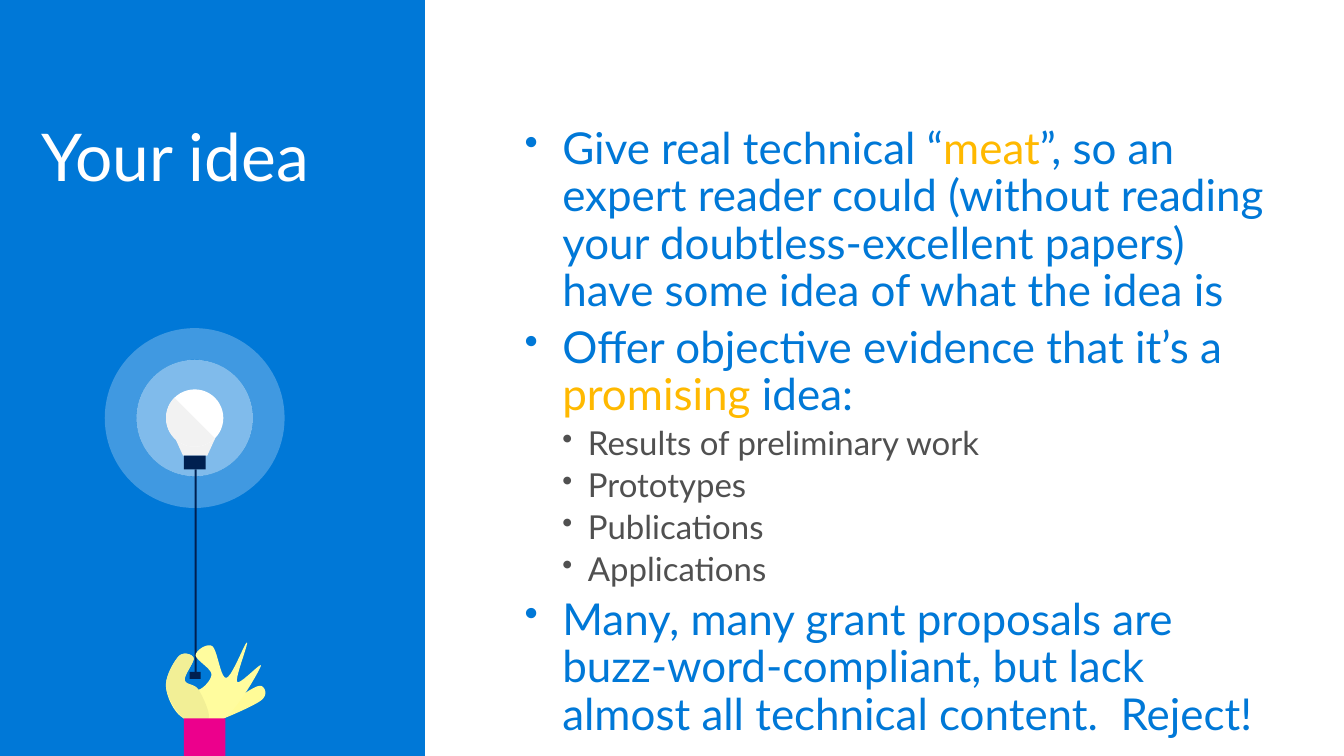
from dataclasses import dataclass
from typing import Any

from lxml import etree
from pptx import Presentation
from pptx.dml.color import RGBColor
from pptx.enum.shapes import MSO_SHAPE
from pptx.enum.text import MSO_ANCHOR, MSO_AUTO_SIZE
from pptx.oxml.ns import qn
from pptx.util import Emu, Inches, Pt

RECTANGLE, OVAL, DONUT = MSO_SHAPE.RECTANGLE, MSO_SHAPE.OVAL, MSO_SHAPE.DONUT
CHORD, FUNNEL = MSO_SHAPE.CHORD, MSO_SHAPE.FLOWCHART_MANUAL_OPERATION
TOP = MSO_ANCHOR.TOP
GROW = MSO_AUTO_SIZE.SHAPE_TO_FIT_TEXT

CELL = Inches(0.1)
COLUMNS, ROWS = 136, 76.5
CURVE_STEPS = 10
FONT = "Lato"
BLUE, YELLOW, WHITE, GREY = "0078D7", "FFB900", "FFFFFF", "505050"
NAVY, SKIN, PINK, SHADE = "002050", "FFFC9E", "EC008C", "F2F2F2"

Point = tuple[float, float]


@dataclass(frozen=True)
class Box:
    left: float
    top: float
    width: float
    height: float


@dataclass(frozen=True)
class Block:
    box: Box
    color: str
    kind: Any = RECTANGLE
    opacity: int = 100
    adjustments: tuple[float, ...] = ()


@dataclass(frozen=True)
class Outline:
    color: str
    points: tuple[Point, ...]


@dataclass(frozen=True)
class Level:
    size: float
    color: str
    number: int = 0
    margin: float = 0
    hanging: float = 0


@dataclass(frozen=True)
class Line:
    level: Level
    text: str
    highlight: str = ""


def disc(diameter: float) -> Box:
    return Box(19.7 - diameter / 2, 42.3 - diameter / 2, diameter, diameter)


TITLE = Level(48, WHITE)
POINT = Level(32, BLUE, 0, 3.8, 3.8)
DETAIL = Level(24, GREY, 1, 6.4, 2.6)

TITLE_LINES = (Line(TITLE, "Your idea"),)
ADVICE_LINES = (
    Line(POINT, "Give real technical “meat”, so an expert reader could (without reading your "
         "doubtless-excellent papers) have some idea of what the idea is", "meat"),
    Line(POINT, "Offer objective evidence that it’s a promising idea:", "promising"),
    *(Line(DETAIL, evidence) for evidence in (
        "Results of preliminary work", "Prototypes", "Publications", "Applications")),
    Line(POINT, "Many, many grant proposals are buzz-word-compliant, but lack almost all "
         "technical content.  Reject!"),
)

PALM_SIDE = ((18.6, 72.7), (16.8, 69.5), (18.1, 66.4), (19.6, 66.6), (18.7, 68.8), (20.1, 69.8))
FINGER_SIDE = ((21.4, 68.2), (19.8, 66.3), (21.5, 65.4), (22.9, 68.6), (25, 65), (24, 69),
               (26.4, 67.4), (22.7, 72.7))
LITTLE_FINGER = ((24.3, 70.5), (26.4, 69.4), (26.4, 70.9), (21.4, 73.1))

ILLUSTRATION: tuple[Block | Outline, ...] = (
    Outline("FFFB97", LITTLE_FINGER),
    Block(disc(18.2), WHITE, DONUT, 25, (0.175,)),
    Block(disc(11.8), WHITE, OVAL, 50),
    Block(Box(17.7, 44.3, 4.1, 1.8), SHADE, FUNNEL),
    Block(disc(5.8), WHITE, OVAL),
    Block(disc(5.8), SHADE, CHORD, 100, (27, 135)),
    Block(Box(19.2, 68, 1.1, 0.7), NAVY),
    Block(Box(19.7, 47.5, 0.2, 20.7), NAVY),
    Block(Box(18.6, 46.1, 2.2, 1.4), NAVY),
    Outline(SKIN, PALM_SIDE + FINGER_SIDE),
    Outline("F2EF96", PALM_SIDE + ((21.1, 72.7),)),
    Block(Box(18.6, 72.7, 4.2, 3.8), PINK),
)


def cells(count: float) -> Emu:
    return Emu(round(count * CELL))


def place(box: Box) -> list[Emu]:
    return [cells(count) for count in (box.left, box.top, box.width, box.height)]


def set_values(target: Any, values: dict[str, Any]) -> None:
    for name, value in values.items():
        setattr(target, name, value)


def paint(target: Any, color: str) -> None:
    target.rgb = RGBColor.from_string(color)


def finish(shape: Any, color: str, opacity: int = 100) -> None:
    shape.shadow.inherit = False
    shape.line.fill.background()
    shape.fill.solid()
    paint(shape.fill.fore_color, color)
    if opacity < 100:
        color_element = shape._element.spPr.find(qn("a:solidFill"))[0]
        etree.SubElement(color_element, qn("a:alpha"), val=str(opacity * 1000))


def draw_block(shapes: Any, block: Block) -> None:
    shape = shapes.add_shape(block.kind, *place(block.box))
    for index, adjustment in enumerate(block.adjustments):
        shape.adjustments[index] = adjustment
    finish(shape, block.color, block.opacity)


def blend(a: float, b: float, c: float, d: float, t: float) -> float:
    return b + t * ((c - a) + t * ((2 * a - 5 * b + 4 * c - d) + t * (3 * (b - c) + d - a))) / 2


def smooth(points: tuple[Point, ...]) -> list[tuple[Emu, Emu]]:
    curve = []
    for index in range(len(points)):
        near = [points[(index + offset) % len(points)] for offset in range(-1, 3)]
        for step in range(CURVE_STEPS):
            x, y = (blend(*axis, step / CURVE_STEPS) for axis in zip(*near))
            curve.append((cells(x), cells(y)))
    return curve


def draw_outline(shapes: Any, outline: Outline) -> None:
    start, *rest = smooth(outline.points)
    builder = shapes.build_freeform(*start)
    builder.add_line_segments(rest, close=True)
    finish(builder.convert_to_shape(), outline.color)


def write_line(paragraph: Any, line: Line) -> None:
    level = line.level
    set_values(paragraph, {"level": level.number, "line_spacing": 0.9,
                           "space_before": Pt(level.size * 0.2)})
    if level.hanging:
        properties = paragraph._p.get_or_add_pPr()
        properties.set("marL", str(cells(level.margin)))
        properties.set("indent", str(-cells(level.hanging)))
        etree.SubElement(properties, qn("a:buSzPct"), val="90000")
        etree.SubElement(properties, qn("a:buChar"), char="•")
    before, mark, after = line.text.partition(line.highlight) if line.highlight else (line.text, "", "")
    for text, color in ((before, level.color), (mark, YELLOW), (after, level.color)):
        if text:
            run = paragraph.add_run()
            run.text = text
            set_values(run.font, {"name": FONT, "size": Pt(level.size)})
            paint(run.font.color, color)


def write_text(shapes: Any, box: Box, lines: tuple[Line, ...]) -> None:
    frame = shapes.add_textbox(*place(box)).text_frame
    set_values(frame, {"word_wrap": True, "auto_size": GROW, "vertical_anchor": TOP,
                       "margin_left": cells(1.6), "margin_right": cells(1.6),
                       "margin_top": cells(1), "margin_bottom": cells(1)})
    for index, line in enumerate(lines):
        write_line(frame.add_paragraph() if index else frame.paragraphs[0], line)


def main() -> None:
    presentation = Presentation()
    set_values(presentation, {"slide_width": cells(COLUMNS), "slide_height": cells(ROWS)})
    slide = presentation.slides.add_slide(presentation.slide_layouts[6])
    draw_block(slide.shapes, Block(Box(0, 0, 43, ROWS), BLUE))
    write_text(slide.shapes, Box(2.6, 11.6, 37.8, 9.3), TITLE_LINES)
    write_text(slide.shapes, Box(51.5, 11.8, 79.5, 75.9), ADVICE_LINES)
    illustration = slide.shapes.add_group_shape().shapes
    for part in ILLUSTRATION:
        if isinstance(part, Block):
            draw_block(illustration, part)
        else:
            draw_outline(illustration, part)
    presentation.save("out.pptx")


if __name__ == "__main__":
    main()
